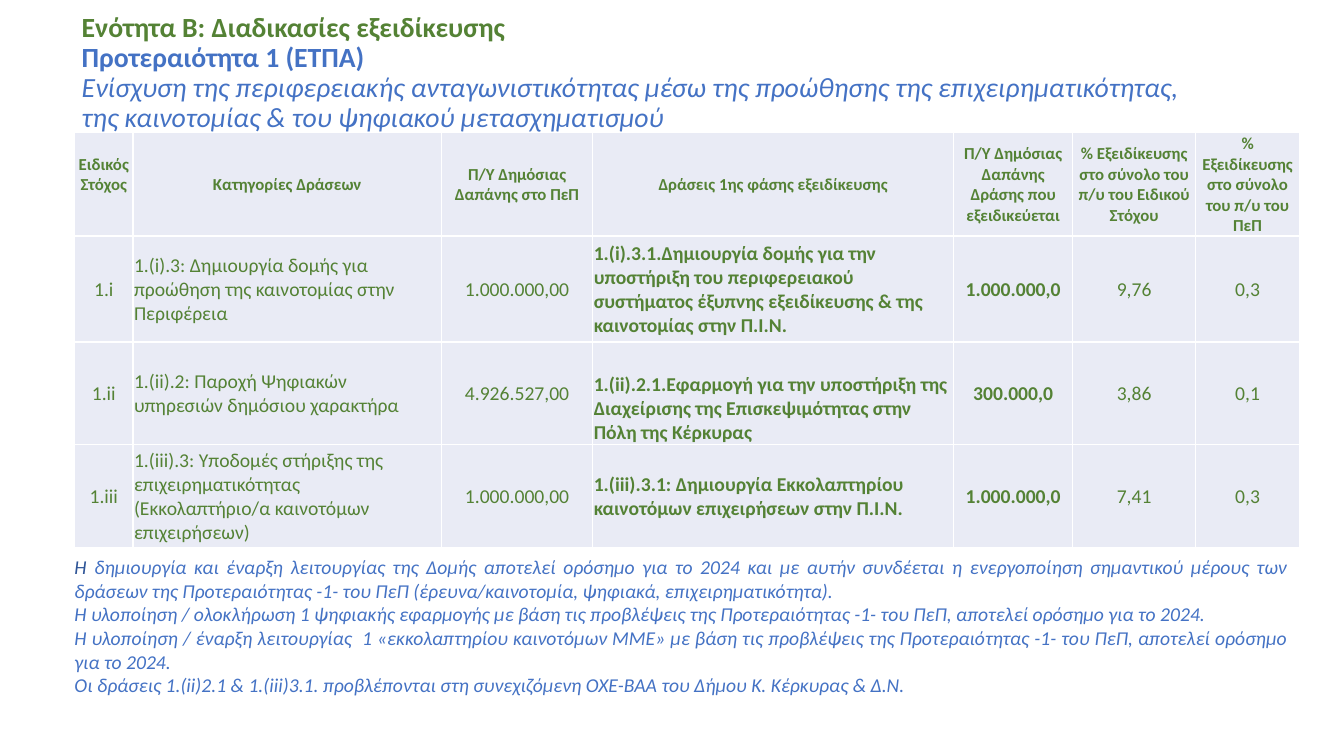
"""Build the slide on the actions of Priority 1, with a budget table and milestone notes."""
from lxml.etree import SubElement
from pptx import Presentation
from pptx.dml.color import RGBColor
from pptx.enum.text import MSO_ANCHOR, MSO_AUTO_SIZE, PP_ALIGN
from pptx.oxml.ns import qn
from pptx.util import Inches, Pt

COLORS = {"green": "548235", "blue": "4472C4", "navy": "2F5597", "cell": "E9EBF5", "border": "FFFFFF"}

deck = Presentation()
deck.slide_width, deck.slide_height = Inches(13.33), Inches(7.5)
ACROSS, DOWN = deck.slide_width / 100, deck.slide_height / 100
page = deck.slides.add_slide(deck.slide_layouts[5])


def write(para, text, size=14, color="green", bold=False, italic=False, align=PP_ALIGN.LEFT):
    """Add formatted text to a paragraph."""
    para.alignment = align
    span = para.add_run()
    span.text = text
    span.font.name, span.font.size = "Calibri", Pt(size)
    span.font.bold, span.font.italic = bold, italic
    span.font.color.rgb = RGBColor.from_string(COLORS[color])


def add_border(cell, side):
    """Draw a thin line on one side of a table cell."""
    line = SubElement(cell._tc.get_or_add_tcPr(), qn(f"a:{side}"), w=str(Pt(1)))
    SubElement(SubElement(line, qn("a:solidFill")), qn("a:srgbClr"), val=COLORS["border"])


title = page.shapes.title
title.left, title.top = int(5.33 * ACROSS), int(1.75 * DOWN)
title.width, title.height = int(86.27 * ACROSS), int(16 * DOWN)
heading = title.text_frame
heading.word_wrap, heading.auto_size = True, MSO_AUTO_SIZE.NONE
heading.vertical_anchor = MSO_ANCHOR.MIDDLE
heading.margin_top = heading.margin_bottom = 0
title_lines = [
    ("Ενότητα Β: Διαδικασίες εξειδίκευσης", {"bold": True}),
    ("Προτεραιότητα 1 (ΕΤΠΑ)", {"color": "blue", "bold": True}),
    ("Ενίσχυση της περιφερειακής ανταγωνιστικότητας μέσω της προώθησης της επιχειρηματικότητας, "
     "της καινοτομίας & του ψηφιακού μετασχηματισμού", {"color": "blue", "italic": True}),
]
for index, (text, style) in enumerate(title_lines):
    para = heading.add_paragraph() if index else heading.paragraphs[0]
    para.line_spacing = 0.9
    write(para, text, size=19.8, **style)

table_rows = [
    ["Ειδικός Στόχος", "Κατηγορίες Δράσεων", "Π/Υ Δημόσιας Δαπάνης στο ΠεΠ",
     "Δράσεις 1ης φάσης εξειδίκευσης", "Π/Υ Δημόσιας Δαπάνης Δράσης που εξειδικεύεται",
     "% Εξειδίκευσης στο σύνολο του π/υ του Ειδικού Στόχου",
     "% Εξειδίκευσης στο σύνολο του π/υ του ΠεΠ"],
    ["1.i", "1.(i).3: Δημιουργία δομής για προώθηση της καινοτομίας στην Περιφέρεια", "1.000.000,00",
     "1.(i).3.1.Δημιουργία δομής για την υποστήριξη του περιφερειακού συστήματος έξυπνης "
     "εξειδίκευσης & της καινοτομίας στην Π.Ι.Ν.", "1.000.000,0", "9,76", "0,3"],
    ["1.ii", "1.(ii).2: Παροχή Ψηφιακών υπηρεσιών δημόσιου χαρακτήρα", "4.926.527,00",
     "1.(ii).2.1.Εφαρμογή για την υποστήριξη της Διαχείρισης της Επισκεψιμότητας στην Πόλη της Κέρκυρας",
     "300.000,0", "3,86", "0,1"],
    ["1.iii", "1.(iii).3: Υποδομές στήριξης της επιχειρηματικότητας (Εκκολαπτήριο/α καινοτόμων επιχειρήσεων)",
     "1.000.000,00", "1.(iii).3.1: Δημιουργία Εκκολαπτηρίου καινοτόμων επιχειρήσεων στην Π.Ι.Ν.",
     "1.000.000,0", "7,41", "0,3"],
]
column_shares = [4.35, 22.96, 11.25, 26.86, 8.85, 9.15, 7.73]
row_shares = [13.6, 14, 13.6, 13.6]
table = page.shapes.add_table(
    len(row_shares), len(column_shares), int(5.55 * ACROSS), int(17.55 * DOWN),
    int(sum(column_shares) * ACROSS), int(sum(row_shares) * DOWN)).table
table.first_row = table.horz_banding = False
for column, share in zip(table.columns, column_shares):
    column.width = int(share * ACROSS)
for row, share in zip(table.rows, row_shares):
    row.height = int(share * DOWN)

for row_index, texts in enumerate(table_rows):
    for column_index, text in enumerate(texts):
        cell = table.cell(row_index, column_index)
        header = row_index == 0
        cell.margin_left = cell.margin_right = cell.margin_top = Inches(0.01)
        cell.margin_bottom = 0
        cell.vertical_anchor = MSO_ANCHOR.MIDDLE
        for side in ("lnL", "lnR", "lnT", "lnB"):
            add_border(cell, side)
        cell.fill.solid()
        cell.fill.fore_color.rgb = RGBColor.from_string(COLORS["cell"])
        write(cell.text_frame.paragraphs[0], text, size=12 if header else 14,
              bold=header or column_index in (3, 4),
              align=PP_ALIGN.LEFT if not header and column_index in (1, 3) else PP_ALIGN.CENTER)
table.cell(0, 0).margin_bottom = Inches(0.2)
table.cell(2, 3).vertical_anchor = MSO_ANCHOR.BOTTOM

notes_box = page.shapes.add_textbox(
    int(4.8 * ACROSS), int(72.8 * DOWN), int(91.82 * ACROSS), int(20.13 * DOWN))
milestones = notes_box.text_frame
milestones.word_wrap = True
milestone_lines = [
    [("Η ", "navy"),
     ("δημιουργία και έναρξη λειτουργίας της Δομής αποτελεί ορόσημο για το 2024 και με αυτήν συνδέεται "
      "η ενεργοποίηση σημαντικού μέρους των δράσεων της Προτεραιότητας -1- του ΠεΠ "
      "(έρευνα/καινοτομία, ψηφιακά, επιχειρηματικότητα).", "blue")],
    [("Η υλοποίηση / ολοκλήρωση 1 ψηφιακής εφαρμογής με βάση τις προβλέψεις της Προτεραιότητας -1- "
      "του ΠεΠ, αποτελεί ορόσημο για το 2024.", "blue")],
    [("Η υλοποίηση / έναρξη λειτουργίας  1 «εκκολαπτηρίου καινοτόμων ΜΜΕ» με βάση τις προβλέψεις της "
      "Προτεραιότητας -1- του ΠεΠ, αποτελεί ορόσημο για το 2024.", "blue")],
    [("Oι δράσεις 1.(ii)2.1 & 1.(iii)3.1. προβλέπονται στη συνεχιζόμενη ΟΧΕ-ΒΑΑ του Δήμου "
      "Κ. Κέρκυρας & Δ.Ν.", "blue")],
]
for index, spans in enumerate(milestone_lines):
    para = milestones.add_paragraph() if index else milestones.paragraphs[0]
    for text, color in spans:
        write(para, text, color=color, italic=True, align=PP_ALIGN.JUSTIFY)

deck.save("out.pptx")
